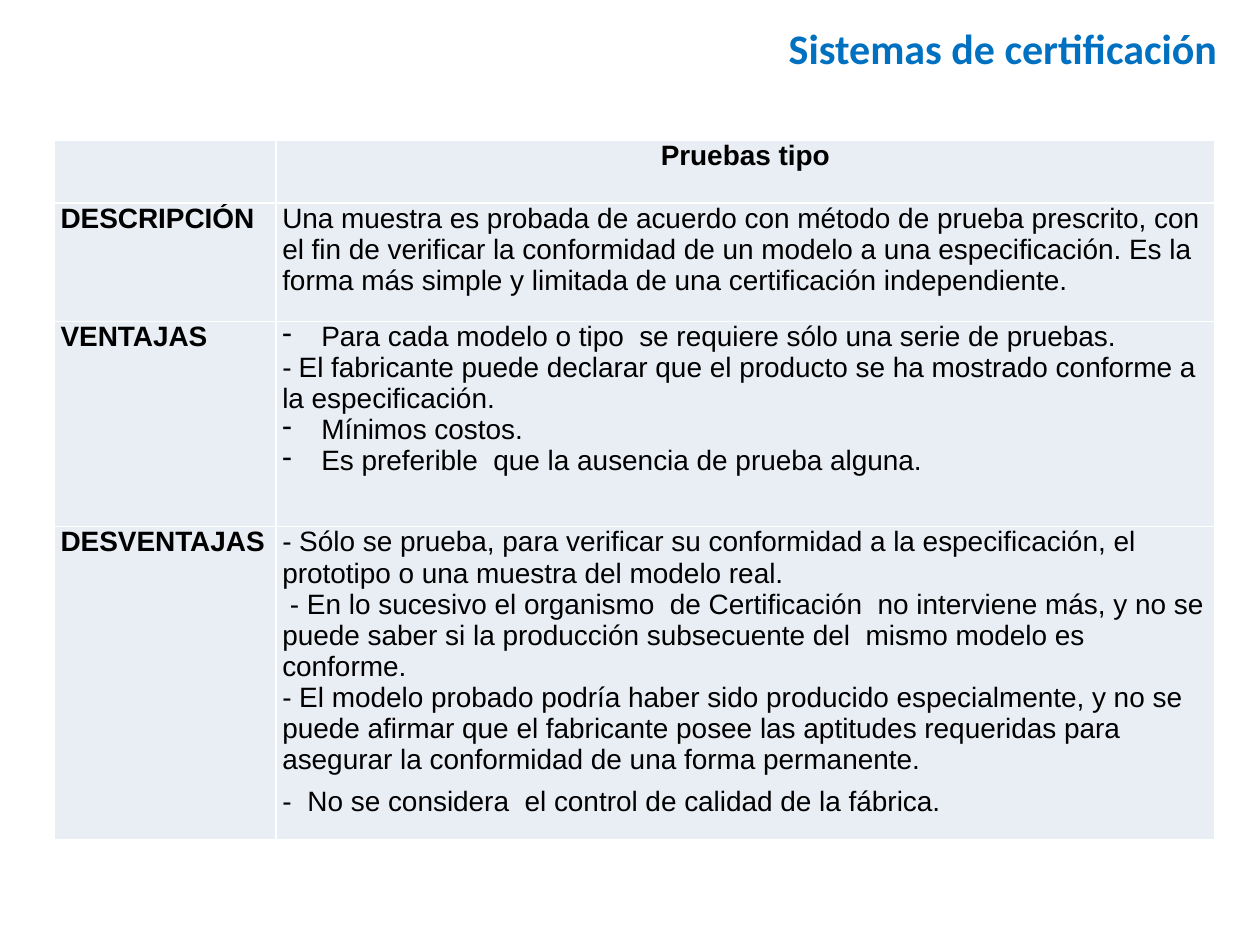
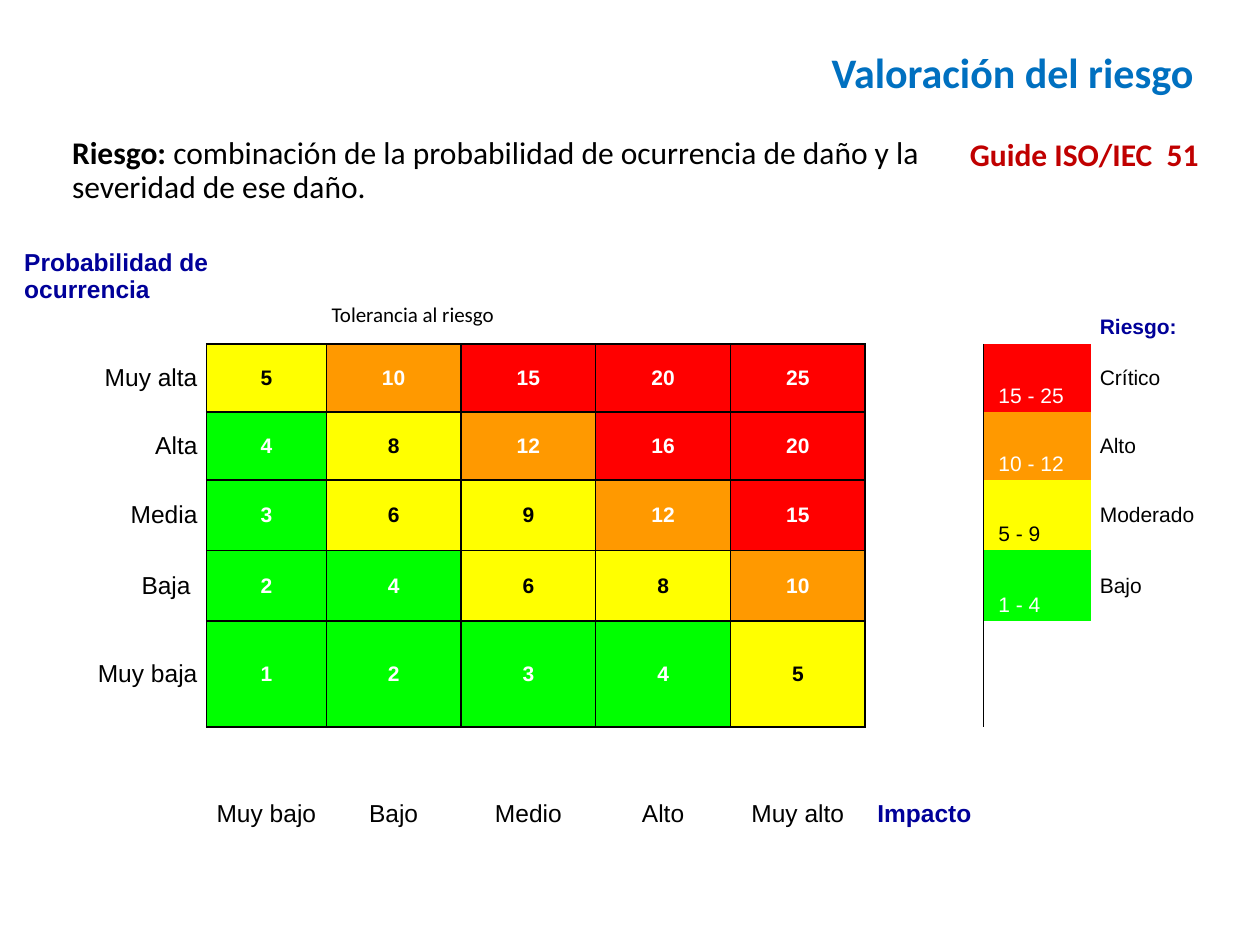
"""Build two slides: certification by type testing, and risk assessment."""
from lxml.etree import SubElement
from pptx import Presentation
from pptx.dml.color import RGBColor
from pptx.enum.text import MSO_ANCHOR, MSO_AUTO_SIZE, PP_ALIGN
from pptx.oxml import parse_xml
from pptx.oxml.ns import nsdecls, qn
from pptx.util import Pt

BLUE, NAVY, BLACK, WHITE = "0070C0", "000099", "000000", "FFFFFF"
PALE, RED, AMBER, GOLD, GREEN = "E9EDF4", "FF0000", "FF9900", "FFFF00", "00FF00"
PLAIN = "{2D5ABB26-0587-4C30-8999-92F81FD0307C}"
BODY = {"name": "Arial", "size": Pt(16), "bold": False}
HEAD = {"name": "Calibri", "size": Pt(24), "bold": True}
MARK = {"name": "Arial", "size": Pt(12), "bold": True}
NOTE = {"name": "Arial", "size": Pt(12), "bold": False}
AXIS = {"name": "Arial", "size": Pt(14), "bold": False}
LEAD = {"name": "Calibri", "size": Pt(18), "bold": False}


def paint(fill, hue):
    """Fill a cell or a font with a hex colour."""
    fill.solid()
    fill.fore_color.rgb = RGBColor.from_string(hue)


def write(para, text, hue, style, align=PP_ALIGN.LEFT, **more):
    """Add a styled run to a paragraph."""
    para.alignment = align
    run = para.add_run()
    run.text = text
    for key, value in {**style, **more}.items():
        setattr(run.font, key, value)
    paint(run.font.fill, hue)


deck = Presentation()
deck.slide_width, deck.slide_height = Pt(720), Pt(540)

plans = [
    ("Sistemas de certificación", (443.5, 9.4, 262, 36), (31, 79.9),
     [126.7, 536.4], [36, 67.7, 117.4, 165.6], (3.6, 0)),
    ("Valoración del riesgo", (468, 23, 223.2, 36), (8.64, 133.9),
     [109.4, 68.4, 77, 77, 77, 77, 67.7, 61.2, 79.2],
     [62.6, 38.9, 38.9, 40.3, 40.3, 60.5, 60.5], (5.2, 2.6)),
]
slides, tables = [], []
for name, box, spot, cols, rows, (side, edge) in plans:
    slide = deck.slides.add_slide(deck.slide_layouts[5])
    title = slide.shapes.title
    title.left, title.top, title.width, title.height = map(Pt, box)
    frame = title.text_frame
    frame.word_wrap, frame.auto_size = False, MSO_AUTO_SIZE.SHAPE_TO_FIT_TEXT
    write(frame.paragraphs[0], name, BLUE, HEAD)
    area = [*spot, sum(cols), sum(rows)]
    table = slide.shapes.add_table(len(rows), len(cols), *map(Pt, area)).table
    table.first_row = table.horz_banding = False
    table._tbl.tblPr.find(qn("a:tableStyleId")).text = PLAIN
    for col, width in zip(table.columns, cols):
        col.width = Pt(width)
    for row, height in zip(table.rows, rows):
        row.height = Pt(height)
    for cell in table.iter_cells():
        cell.margin_left = cell.margin_right = Pt(side)
        cell.margin_top = cell.margin_bottom = Pt(edge)
    slides.append(slide)
    tables.append(table)

types, risks = tables
labels = ["", "DESCRIPCIÓN", "VENTAJAS", "DESVENTAJAS"]
texts = [
    [("Pruebas tipo", {})],
    [("Una muestra es probada de acuerdo con método de prueba prescrito, con el fin de "
      "verificar la conformidad de un modelo a una especificación. Es la forma más simple "
      "y limitada de una certificación independiente.", {})],
    [("Para cada modelo o tipo  se requiere sólo una serie de pruebas.", {"dash": 22.3}),
     ("-\tEl fabricante puede declarar que el producto se ha mostrado conforme a la "
      "especificación.", {"tab": 9.4}),
     ("Mínimos costos.", {"dash": 22.3}),
     ("Es preferible  que la ausencia de prueba alguna.", {"dash": 22.3})],
    [("- Sólo se prueba, para verificar su conformidad a la especificación, el prototipo "
      "o una muestra del modelo real.", {}),
     ("- En lo sucesivo el organismo  de Certificación  no interviene más, y no se puede "
      "saber si la producción subsecuente del  mismo modelo es conforme.", {"first": 4.4}),
     ("- El modelo probado podría haber sido producido especialmente, y no se puede "
      "afirmar que el fabricante posee las aptitudes requeridas para asegurar la "
      "conformidad de una forma permanente.", {"after": 6}),
     ("-\tNo se considera  el control de calidad de la fábrica.", {"tab": 14.4})],
]
edges = []
for r, (label, lines) in enumerate(zip(labels, texts)):
    left, right = types.cell(r, 0), types.cell(r, 1)
    for cell in (left, right):
        paint(cell.fill, PALE)
        edges.append((cell, "BTRL", WHITE))
    if label:
        write(left.text_frame.paragraphs[0], label, BLACK, BODY, bold=True)
    frame = right.text_frame
    for i, (text, form) in enumerate(lines):
        para = frame.add_paragraph() if i else frame.paragraphs[0]
        props = para._p.get_or_add_pPr()
        if "dash" in form:
            props.set("marL", str(Pt(form["dash"])))
            props.set("indent", str(-Pt(form["dash"])))
            SubElement(props, qn("a:buChar"), char="-")
        if "first" in form:
            props.set("indent", str(Pt(form["first"])))
        if "tab" in form:
            stops = SubElement(props, qn("a:tabLst"))
            SubElement(stops, qn("a:tab"), pos=str(Pt(form["tab"])), algn="l")
        if "after" in form:
            para.space_after = Pt(form["after"])
        align = PP_ALIGN.LEFT if r else PP_ALIGN.CENTER
        write(para, text, BLACK, BODY, align, bold=not r)

corner = risks.cell(0, 0)
corner.merge(risks.cell(0, 1))
corner.margin_top = Pt(8.3)
write(corner.text_frame.paragraphs[0], "Probabilidad de", NAVY, AXIS, bold=True)
write(corner.text_frame.add_paragraph(), "ocurrencia", NAVY, AXIS, bold=True)

for r, label in enumerate(["Muy alta", "Alta", "Media", "Baja ", "Muy baja"], 1):
    cell = risks.cell(r, 0)
    cell.vertical_anchor = MSO_ANCHOR.MIDDLE
    write(cell.text_frame.paragraphs[0], label, BLACK, AXIS, PP_ALIGN.RIGHT)
    for c in range(1, 6):
        score = (6 - r) * c
        hue = next(h for low, h in ((15, RED), (10, AMBER), (5, GOLD), (1, GREEN))
                   if score >= low)
        cell = risks.cell(r, c)
        cell.vertical_anchor = MSO_ANCHOR.MIDDLE
        paint(cell.fill, hue)
        ink = BLACK if hue == GOLD else WHITE
        write(cell.text_frame.paragraphs[0], str(score), ink, MARK, PP_ALIGN.CENTER)

for c, label in enumerate(["Muy bajo", "Bajo", "Medio", "Alto", "Muy alto", "Impacto"], 1):
    cell = risks.cell(6, c)
    cell.vertical_anchor = MSO_ANCHOR.BOTTOM
    last = c == 6
    write(cell.text_frame.paragraphs[0], label, NAVY if last else BLACK, AXIS,
          PP_ALIGN.CENTER, bold=last)

cell = risks.cell(0, 8)
cell.vertical_anchor = MSO_ANCHOR.BOTTOM
write(cell.text_frame.paragraphs[0], "Riesgo:", NAVY, MARK)
levels = [("15 - 25", "Crítico", RED), ("10 - 12", "Alto", AMBER),
          ("5 - 9", "Moderado", GOLD), ("1 - 4", "Bajo", GREEN)]
for r, (span, level, hue) in enumerate(levels, 1):
    key, cell = risks.cell(r, 7), risks.cell(r, 8)
    key.vertical_anchor, cell.vertical_anchor = MSO_ANCHOR.BOTTOM, MSO_ANCHOR.MIDDLE
    key.margin_left = Pt(8.5)
    paint(key.fill, hue)
    write(key.text_frame.paragraphs[0], span, BLACK if hue == GOLD else WHITE, NOTE)
    write(cell.text_frame.paragraphs[0], level, BLACK, NOTE)

grid = {(r, c) for r in range(1, 6) for c in range(1, 6)}
steps = {"B": (1, 0), "T": (-1, 0), "R": (0, 1), "L": (0, -1)}
for r in range(7):
    for c in range(9):
        sides = [s for s, (y, x) in steps.items() if grid & {(r, c), (r + y, c + x)}]
        edges.append((risks.cell(r, c), sides, BLACK))
for cell, sides, hue in edges:
    props = cell._tc.get_or_add_tcPr()
    for side in sides:
        props.insert(0, parse_xml(
            f'<a:ln{side} {nsdecls("a")} w="{Pt(1)}"><a:solidFill>'
            f'<a:srgbClr val="{hue}"/></a:solidFill></a:ln{side}>'))

notes = [
    ((184.3, 169.9, 114.5, 19.4), (5.2, 2.6), False,
     [("Tolerancia al riesgo", BLACK, {"size": Pt(12)})]),
    ((31, 73.4, 561.6, 45.4), (10.2, 5.1), True,
     [("Riesgo: ", BLACK, {"bold": True}),
      ("combinación de la probabilidad de ocurrencia de daño y la severidad de ese daño.",
       BLACK, {})]),
    ((547.2, 73.4, 146.2, 28.8), (7.2, 3.6), False,
     [("Guide ISO/IEC  51", "C00000", {"bold": True})]),
]
for box, (side, edge), wrap, runs in notes:
    frame = slides[1].shapes.add_textbox(*map(Pt, box)).text_frame
    look = {"margin_left": Pt(side), "margin_right": Pt(side), "margin_top": Pt(edge),
            "margin_bottom": Pt(edge), "word_wrap": wrap}
    for key, value in look.items():
        setattr(frame, key, value)
    para = frame.paragraphs[0]
    para.line_spacing = 0.9 if wrap else 1.0
    for text, hue, more in runs:
        write(para, text, hue, LEAD, **more)

deck.save("out.pptx")
